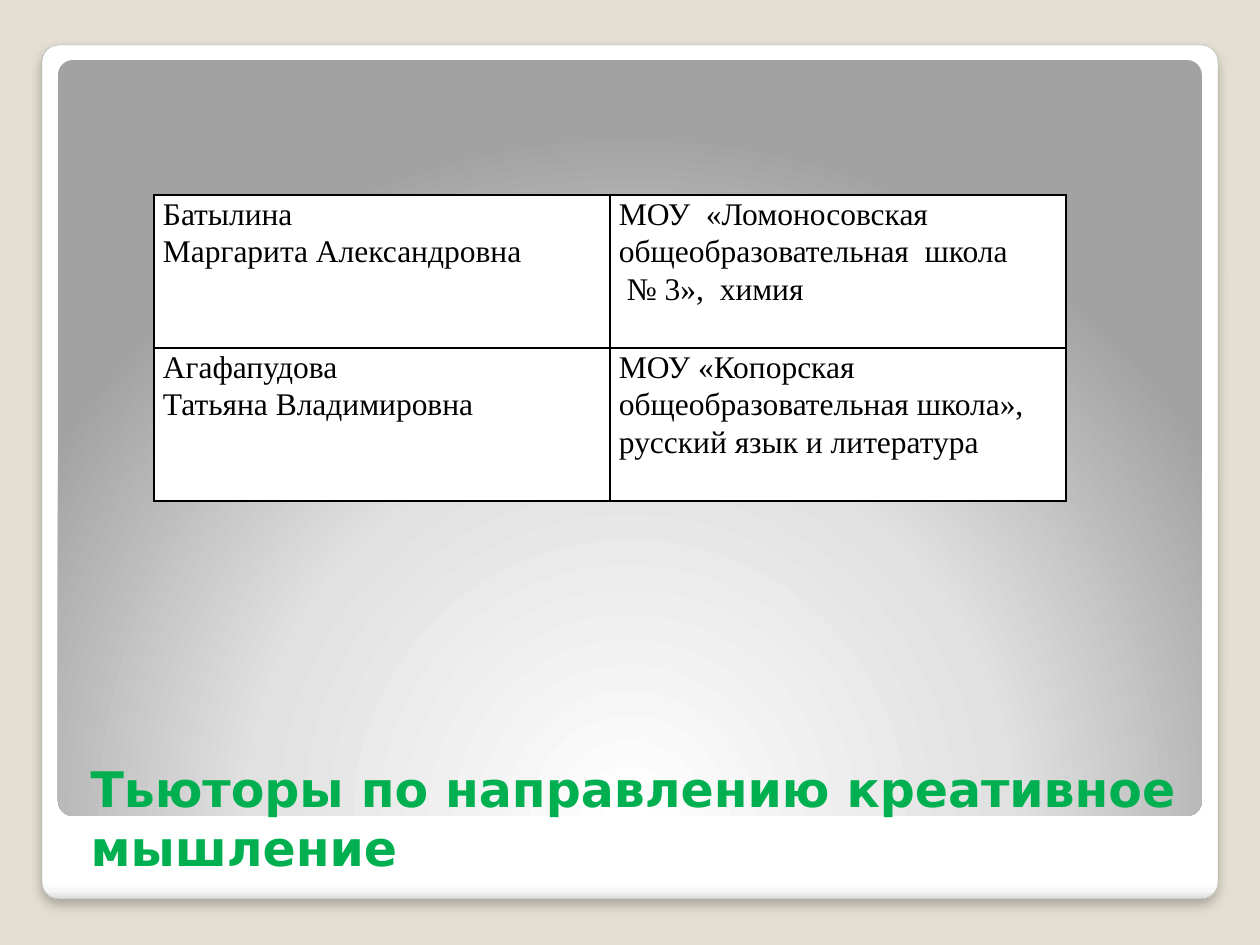
from dataclasses import dataclass

from lxml.etree import SubElement
from pptx import Presentation
from pptx.dml.color import RGBColor
from pptx.enum.shapes import MSO_SHAPE as Shape
from pptx.enum.text import MSO_ANCHOR as Anchor, MSO_AUTO_SIZE as AutoSize, PP_ALIGN as Align
from pptx.oxml import parse_xml
from pptx.oxml.ns import nsdecls, qn
from pptx.util import Emu, Pt

PX_PER_INCH = 126


def px(n: int) -> Emu:
    return Emu(round(n * 914400 / PX_PER_INCH))


@dataclass(frozen=True)
class Theme:
    background: str = "E3DED1"
    title: str = "00B050"
    text: str = "000000"
    cell: str = "FFFFFF"
    edge: str = "A4A4A4"
    title_font: str = "DejaVu Sans"
    table_font: str = "Times New Roman"
    title_size: int = 28
    table_size: int = 18


@dataclass(frozen=True)
class Box:
    left: int
    top: int
    width: int
    height: int

    def emu(self) -> tuple[Emu, ...]:
        return tuple(px(n) for n in (self.left, self.top, self.width, self.height))


@dataclass(frozen=True)
class Panel:
    box: Box
    stops: tuple[tuple[int, str], ...]
    direction: str
    framed: bool = False


@dataclass(frozen=True)
class Tutor:
    name: tuple[str, ...]
    school: tuple[str, ...]


THEME = Theme()
DOWNWARD = '<a:lin ang="5400000" scaled="0"/>'
FROM_BELOW = ('<a:path path="circle"><a:fillToRect l="50000" t="175000" '
              'r="50000" b="-75000"/></a:path>')
PANELS = (
    Panel(Box(42, 45, 1176, 854),
          ((0, "FFFFFF"), (98, "FFFFFF"), (99, "F7F7F7"), (100, "DADADA")),
          DOWNWARD, framed=True),
    Panel(Box(58, 60, 1144, 756),
          ((0, "FFFFFF"), (55, "E1E1E1"), (100, "A2A2A2")), FROM_BELOW),
)
TITLE = "Тьюторы по направлению креативное мышление"
TITLE_BOX = Box(78, 738, 1128, 145)
TABLE_BOX = Box(154, 195, 912, 306)
TUTORS = (
    Tutor(("Батылина", "Маргарита Александровна"),
          ("МОУ  «Ломоносовская общеобразовательная  школа", " № 3»,  химия")),
    Tutor(("Агафапудова", "Татьяна Владимировна"),
          ("МОУ «Копорская общеобразовательная школа», русский язык и литература",)),
)


def rgb(color: str) -> RGBColor:
    return RGBColor.from_string(color)


def set_gradient(shape, panel: Panel) -> None:
    stops = "".join(f'<a:gs pos="{pos * 1000}"><a:srgbClr val="{color}"/></a:gs>'
                    for pos, color in panel.stops)
    gradient = parse_xml(f'<a:gradFill {nsdecls("a")} rotWithShape="1">'
                         f'<a:gsLst>{stops}</a:gsLst>{panel.direction}</a:gradFill>')
    shape.fill.background()
    properties = shape._element.spPr
    properties.replace(properties.find(qn("a:noFill")), gradient)


def add_soft_shadow(shape) -> None:
    effects = shape._element.spPr.find(qn("a:effectLst"))
    shadow = SubElement(effects, qn("a:outerShdw"), blurRad=str(Pt(6)), dist=str(Pt(4)),
                        dir="5400000", algn="t", rotWithShape="0")
    color = SubElement(shadow, qn("a:srgbClr"), val="000000")
    SubElement(color, qn("a:alpha"), val="25000")


def add_panel(s, panel: Panel) -> None:
    sp = s.shapes.add_shape(Shape.ROUNDED_RECTANGLE, *panel.box.emu())
    sp.adjustments[0] = 0.02
    sp.shadow.inherit = False
    set_gradient(sp, panel)
    if panel.framed:
        sp.line.color.rgb = rgb(THEME.edge)
        sp.line.width = Pt(0.16)
        add_soft_shadow(sp)
    else:
        sp.line.fill.background()


def style_font(font, name: str, size: int, color: str, bold: bool = False) -> None:
    font.name, font.size, font.bold = name, Pt(size), bold
    font.color.rgb = rgb(color)


def place_title(s) -> None:
    """Fill the title placeholder and bring it in front of the panels."""
    title = s.shapes.title
    title.left, title.top, title.width, title.height = TITLE_BOX.emu()
    tf = title.text_frame
    tf.text = TITLE
    tf.word_wrap = True
    tf.auto_size = AutoSize.NONE
    tf.vertical_anchor = Anchor.BOTTOM
    p = tf.paragraphs[0]
    p.alignment = Align.LEFT
    style_font(p.font, THEME.title_font, THEME.title_size, THEME.title, bold=True)
    s.shapes._spTree.append(title._element)


def add_borders(cell) -> None:
    properties = cell._tc.get_or_add_tcPr()
    for i, side in enumerate("LRTB"):
        properties.insert(i, parse_xml(
            f'<a:ln{side} {nsdecls("a")} w="{Pt(1)}"><a:solidFill>'
            f'<a:srgbClr val="{THEME.text}"/></a:solidFill></a:ln{side}>'))


def fill_cell(cell, lines: tuple[str, ...]) -> None:
    cell.fill.solid()
    cell.fill.fore_color.rgb = rgb(THEME.cell)
    cell.margin_left = cell.margin_right = px(9)
    cell.margin_top = cell.margin_bottom = 0
    cell.text_frame.text = "\n".join(lines)
    for p in cell.text_frame.paragraphs:
        p.line_spacing = 1.07
        style_font(p.font, THEME.table_font, THEME.table_size, THEME.text)
    add_borders(cell)


def add_tutor_table(s) -> None:
    table = s.shapes.add_table(len(TUTORS), 2, *TABLE_BOX.emu()).table
    table.first_row = table.horz_banding = False
    for row, tutor in zip(table.rows, TUTORS):
        for cell, lines in zip(row.cells, (tutor.name, tutor.school)):
            fill_cell(cell, lines)


def main() -> None:
    prs = Presentation()
    prs.slide_width, prs.slide_height = px(1260), px(945)
    s = prs.slides.add_slide(prs.slide_layouts[5])
    s.background.fill.solid()
    s.background.fill.fore_color.rgb = rgb(THEME.background)
    for panel in PANELS:
        add_panel(s, panel)
    place_title(s)
    add_tutor_table(s)
    prs.save("out.pptx")


if __name__ == "__main__":
    main()
